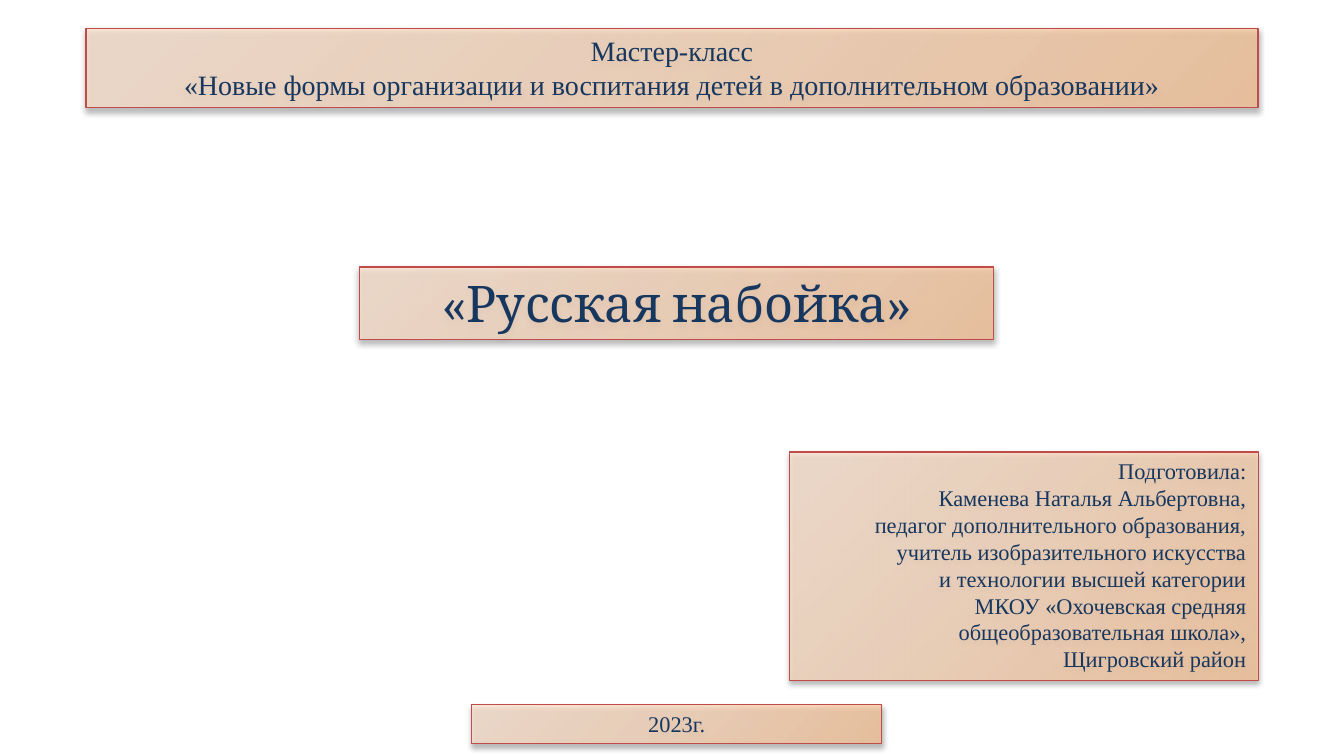
from lxml import etree
from pptx import Presentation
from pptx import util as u
from pptx.dml.color import RGBColor
from pptx.enum import shapes, text
from pptx.oxml import parse_xml
from pptx.oxml.ns import nsdecls, qn

NAVY = RGBColor(0x17, 0x37, 0x5E)
RED = RGBColor(0xBF, 0x4C, 0x48)
BLACK = RGBColor(0, 0, 0)
PEACH = (RGBColor(0xFD, 0xE4, 0xCF), RGBColor(0xFC, 0xD5, 0xB5), RGBColor(0xFA, 0xC0, 0x90))
CENTER, RIGHT = text.PP_ALIGN.CENTER, text.PP_ALIGN.RIGHT
WIDTH = u.Inches(10)
HEIGHT = WIDTH * 9 // 16
CELL = WIDTH // 100  # the slide is a grid of 100 columns by 56.25 rows


class TitleSlide:
    def __init__(self, prs):
        self.s = prs.slides.add_slide(prs.slide_layouts[6])

    def fill_gradient(self, sp):
        """Diagonal peach gradient, 70 % opaque."""
        stops = "".join(
            f'<a:gs pos="{i * 50000}"><a:srgbClr val="{c}"><a:alpha val="70000"/></a:srgbClr></a:gs>'
            for i, c in enumerate(PEACH))
        grad = parse_xml(f'<a:gradFill {nsdecls("a")} rotWithShape="1"><a:gsLst>{stops}</a:gsLst>'
                         '<a:lin ang="2700000" scaled="0"/></a:gradFill>')
        sp._element.spPr.find(qn("a:prstGeom")).addnext(grad)

    def drop_shadow(self, sp):
        sp.shadow.inherit = False
        effects = sp._element.spPr.find(qn("a:effectLst"))
        shadow = etree.SubElement(effects, qn("a:outerShdw"), blurRad=str(u.Pt(3.1)),
                                  dist=str(u.Pt(1.6)), dir="5400000", rotWithShape="0")
        color = etree.SubElement(shadow, qn("a:srgbClr"), val=str(BLACK))
        etree.SubElement(color, qn("a:alpha"), val="38000")

    def plate(self, col, row, cols, rows, lines, size, align=CENTER, font="Times New Roman"):
        """Shaded rectangle with one paragraph per line; place and size in grid cells."""
        box = [round(n * CELL) for n in (col, row, cols, rows)]
        sp = self.s.shapes.add_shape(shapes.MSO_SHAPE.RECTANGLE, *box)
        self.fill_gradient(sp)
        sp.line.color.rgb = RED
        sp.line.width = u.Pt(0.75)
        self.drop_shadow(sp)

        tf = sp.text_frame
        tf.word_wrap = True
        tf.auto_size = text.MSO_AUTO_SIZE.SHAPE_TO_FIT_TEXT
        tf.vertical_anchor = text.MSO_ANCHOR.TOP
        tf.margin_left = tf.margin_right = u.Inches(0.09)
        tf.margin_top = tf.margin_bottom = u.Inches(0.04)
        for i, line in enumerate(lines):
            p = tf.add_paragraph() if i else tf.paragraphs[0]
            p.alignment = align
            r = p.add_run()
            r.text = line
            r.font.name = font
            r.font.size = u.Pt(size)
            r.font.color.rgb = NAVY


def main():
    prs = Presentation()
    prs.slide_width, prs.slide_height = WIDTH, HEIGHT
    slide = TitleSlide(prs)
    slide.plate(6.4, 2.12, 87.2, 5.9, [
        "Мастер-класс",
        " «Новые формы организации и воспитания детей в дополнительном образовании» ",
    ], 15)
    slide.plate(58.74, 33.63, 34.9, 17, [
        "Подготовила:",
        "Каменева Наталья Альбертовна,",
        "педагог дополнительного образования,",
        "учитель изобразительного искусства",
        "и технологии высшей категории",
        "МКОУ «Охочевская средняя общеобразовательная школа»,",
        "Щигровский район",
    ], 12, RIGHT)
    slide.plate(35.1, 52.44, 30.5, 2.9, ["2023г."], 12)
    slide.plate(26.74, 19.88, 47.2, 5.4, ["«Русская набойка»"], 27, font="Cambria")
    prs.save("out.pptx")


if __name__ == "__main__":
    main()
